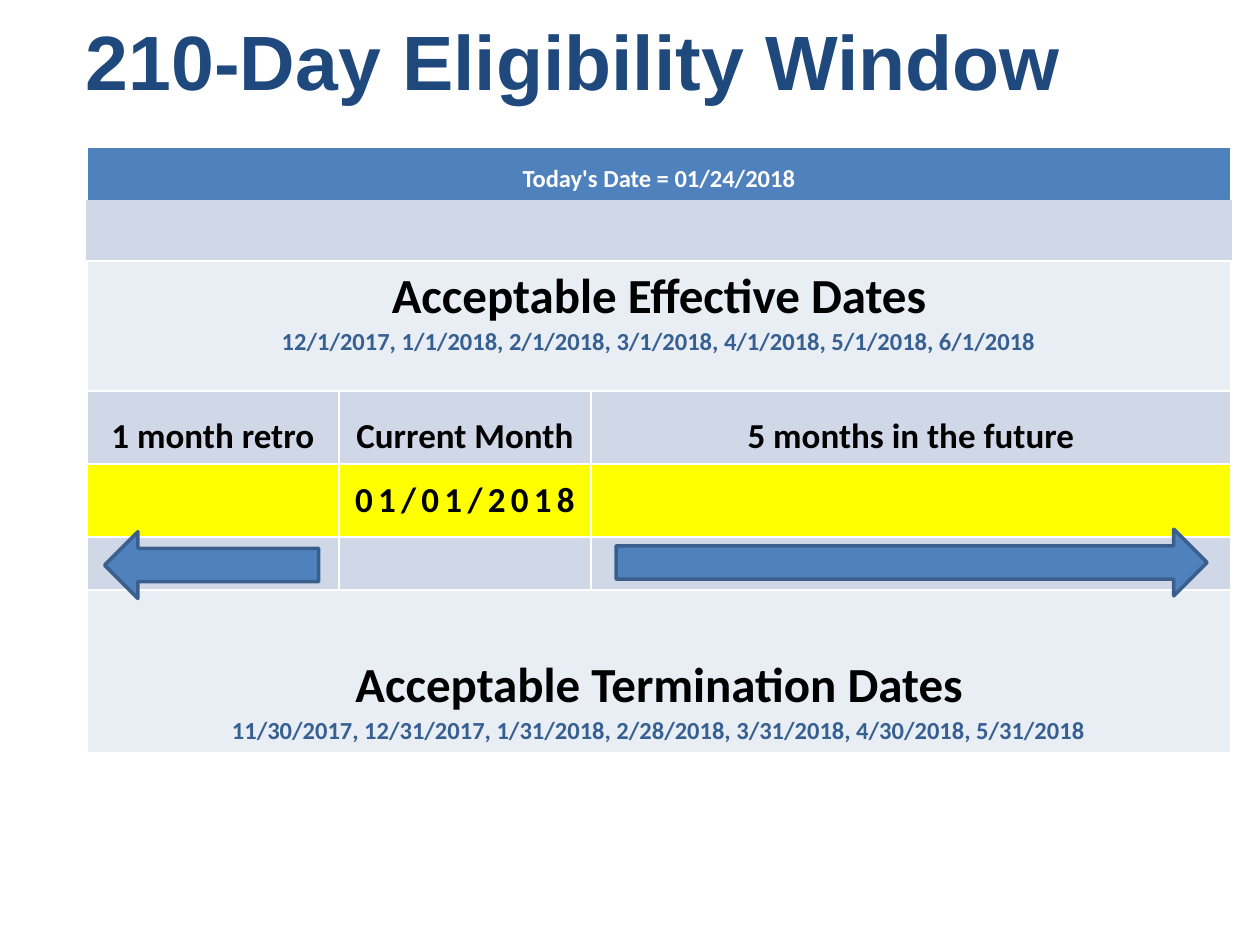
from pptx import Presentation
from pptx.dml.color import RGBColor
from pptx.enum.shapes import MSO_SHAPE
from pptx.enum.text import MSO_ANCHOR, MSO_AUTO_SIZE, PP_ALIGN
from pptx.oxml import parse_xml
from pptx.oxml.ns import nsdecls
from pptx.util import Inches, Pt

# Content
TITLE = "210-Day Eligibility Window"
BLUE, NAVY, EDGE, DATES = "4F81BD", "1F497D", "3A5F8C", "376092"
BAND, PALE, YELLOW, WHITE, BLACK = "D0D8E8", "E9EDF4", "FFFF00", "FFFFFF", "000000"

# Each line of a cell: text, size, colour
EFFECTIVE = [
    ("Acceptable Effective Dates", 28, BLACK),
    ("12/1/2017, 1/1/2018, 2/1/2018, 3/1/2018, 4/1/2018, 5/1/2018, 6/1/2018", 14, DATES),
]
TERMINATION = [
    ("Acceptable Termination Dates", 28, BLACK),
    ("11/30/2017, 12/31/2017, 1/31/2018, 2/28/2018, 3/31/2018, 4/30/2018, 5/31/2018", 14, DATES),
]
# A row with one cell spans the whole table
ROWS = [
    dict(height=0.42, fill=BLUE, cells=[[("Today's Date = 01/24/2018", 14, WHITE)]]),
    dict(height=0.48, fill=BAND, cells=[[]], border=BAND),
    dict(height=1.02, fill=PALE, cells=[EFFECTIVE], bottom=0.27),
    dict(height=0.58, fill=BAND, cells=[[("1 month retro", 20, BLACK)],
                                        [("Current Month", 20, BLACK)],
                                        [("5 months in the future", 20, BLACK)]]),
    dict(height=0.58, fill=YELLOW, cells=[[], [("01/01/2018", 20, BLACK)], []],
         anchor=MSO_ANCHOR.MIDDLE, spacing=3),
    dict(height=0.42, fill=BAND, cells=[[], [], []]),
    dict(height=1.29, fill=PALE, cells=[TERMINATION]),
]
COLUMNS = [2, 2, 5.08]
LEFT, TOP = 0.69, 1.17
ARROWS = [
    (MSO_SHAPE.RIGHT_ARROW, 4.89, 4.2, 4.69),
    (MSO_SHAPE.LEFT_ARROW, 0.83, 4.22, 1.7),
]
ARROW_HEIGHT = 0.53


def color(value):
    return RGBColor.from_string(value)


def write(para, text, size=18, fill=BLACK, font="Calibri", align=PP_ALIGN.CENTER, spacing=0):
    para.alignment = align
    span = para.add_run()
    span.text = text
    span.font.name, span.font.size, span.font.bold = font, Pt(size), True
    span.font.color.rgb = color(fill)
    if spacing:
        span.font._element.set("spc", str(spacing * 100))


def set_borders(cell, value, width=1):
    properties = cell._tc.get_or_add_tcPr()
    for index, side in enumerate("LRTB"):
        properties.insert(index, parse_xml(
            f'<a:ln{side} {nsdecls("a")} w="{Pt(width)}"><a:solidFill>'
            f'<a:srgbClr val="{value}"/></a:solidFill></a:ln{side}>'))


def fill_row(table, index, row):
    table.rows[index].height = Inches(row["height"])
    if len(row["cells"]) == 1:
        table.cell(index, 0).merge(table.cell(index, len(COLUMNS) - 1))
    for cell in table.rows[index].cells:
        cell.fill.solid()
        cell.fill.fore_color.rgb = color(row["fill"])
        set_borders(cell, row.get("border", WHITE))
    for column, lines in enumerate(row["cells"]):
        cell = table.cell(index, column)
        cell.vertical_anchor = row.get("anchor", MSO_ANCHOR.BOTTOM)
        cell.margin_left = cell.margin_right = Inches(0.05)
        cell.margin_bottom = Inches(row.get("bottom", 0.05))
        frame = cell.text_frame
        for number, (text, size, fill) in enumerate(lines):
            para = frame.add_paragraph() if number else frame.paragraphs[0]
            write(para, text, size=size, fill=fill, spacing=row.get("spacing", 0))


def main():
    deck = Presentation()
    deck.slide_width, deck.slide_height = Inches(10), Inches(7.5)
    page = deck.slides.add_slide(deck.slide_layouts[5])

    # Title
    title = page.shapes.title
    title.left, title.top = Inches(0.58), Inches(0)
    title.width, title.height = Inches(9.42), Inches(1.83)
    frame = title.text_frame
    frame.auto_size, frame.word_wrap = MSO_AUTO_SIZE.NONE, True
    frame.vertical_anchor, frame.margin_top = MSO_ANCHOR.TOP, Inches(0.11)
    write(frame.paragraphs[0], TITLE, size=44, fill=NAVY, font="Arial", align=PP_ALIGN.LEFT)

    # Eligibility table
    height = sum(row["height"] for row in ROWS)
    table = page.shapes.add_table(len(ROWS), len(COLUMNS), Inches(LEFT), Inches(TOP),
                                  Inches(sum(COLUMNS)), Inches(height)).table
    table.first_row = table.horz_banding = False
    for column, width in zip(table.columns, COLUMNS):
        column.width = Inches(width)
    for index, row in enumerate(ROWS):
        fill_row(table, index, row)

    # Arrows to past and future months
    for kind, left, top, width in ARROWS:
        arrow = page.shapes.add_shape(kind, Inches(left), Inches(top),
                                      Inches(width), Inches(ARROW_HEIGHT))
        arrow.shadow.inherit = False
        arrow.fill.solid()
        arrow.fill.fore_color.rgb = color(BLUE)
        arrow.line.color.rgb = color(EDGE)
        arrow.line.width = Pt(2)

    deck.save("out.pptx")


if __name__ == "__main__":
    main()
